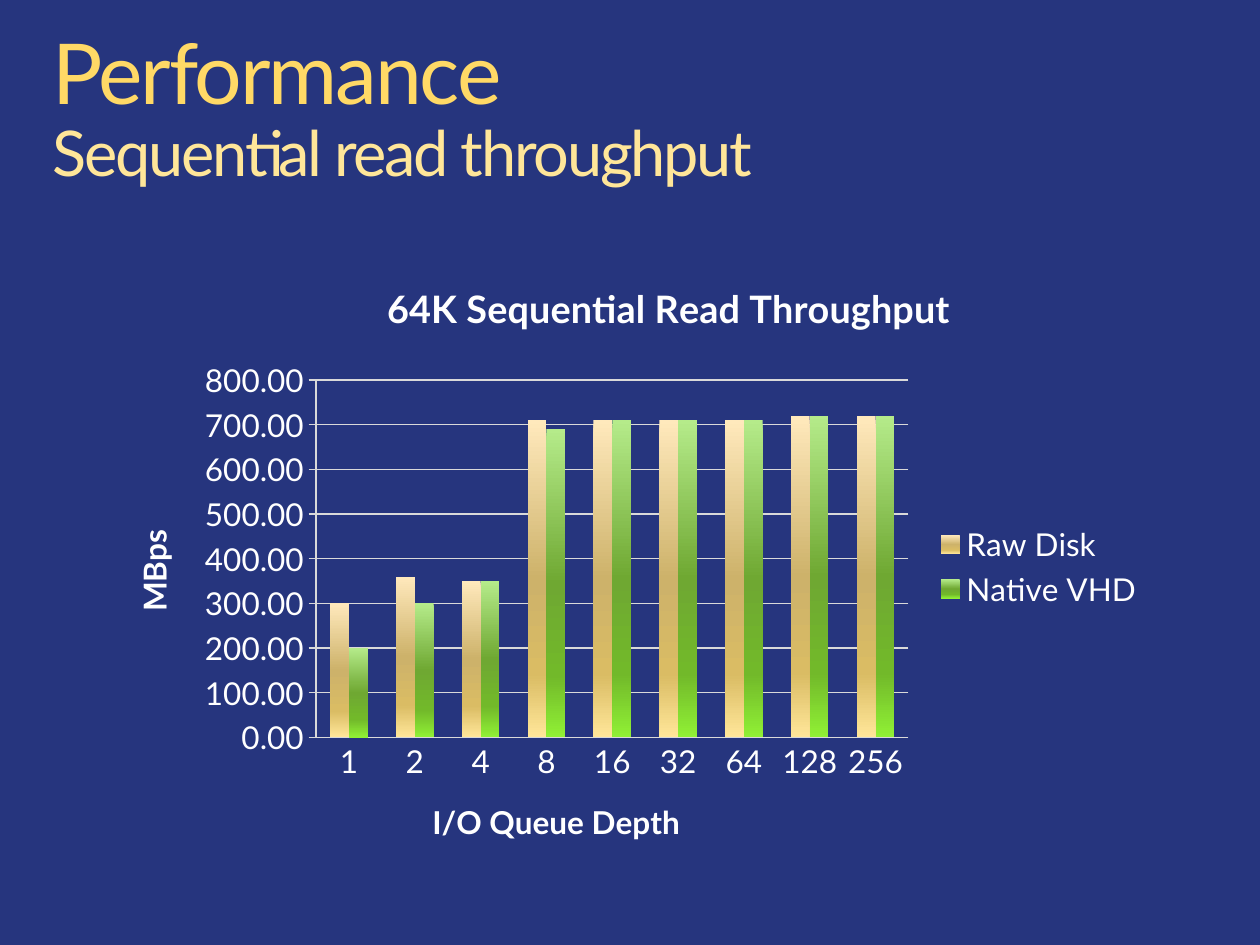
from dataclasses import dataclass

from lxml import etree
from pptx import Presentation
from pptx.chart.data import CategoryChartData
from pptx.dml.color import RGBColor
from pptx.enum.chart import XL_CHART_TYPE as ChartType
from pptx.enum.chart import XL_LEGEND_POSITION as LegendPosition
from pptx.enum.chart import XL_TICK_MARK as TickMark
from pptx.enum.text import MSO_ANCHOR as Anchor
from pptx.oxml import parse_xml
from pptx.oxml.ns import nsdecls, qn
from pptx.util import Cm, Pt

FONT = "Lato"
BACKGROUND, WHITE, LINE = "26357E", "FFFFFF", "D9D9D9"
QUEUE_DEPTHS = [str(2 ** power) for power in range(9)]


@dataclass
class TitleLine:
    text: str
    size: int
    color: str


@dataclass
class ThroughputSeries:
    name: str
    values: list[int]
    stops: list[tuple[int, str]]


TITLE_LINES = [
    TitleLine("Performance", 48, "FFD966"),
    TitleLine("Sequential read throughput", 36, "FFE699"),
]
SERIES = [
    ThroughputSeries("Raw Disk", [300, 360, 350, 710, 710, 710, 710, 720, 720],
                     [(0, "FFE9BC"), (50, "CDB26A"), (80, "DABC64"), (100, "FFE699")]),
    ThroughputSeries("Native VHD", [200, 300, 350, 690, 710, 710, 710, 720, 720],
                     [(0, "B5EB8A"), (50, "6FA832"), (80, "72B92A"), (100, "90F035")]),
]


def rgb(color: str) -> RGBColor:
    return RGBColor.from_string(color)


def format_font(font, color: str = WHITE, **values) -> None:
    for name, value in ({"name": FONT} | values).items():
        setattr(font, name, value)
    font.color.rgb = rgb(color)


def add_title(slide) -> None:
    box = slide.shapes.add_textbox(Cm(1.06), Cm(0.64), Cm(23.27), Cm(3.23))
    frame = box.text_frame
    settings = {"word_wrap": True, "vertical_anchor": Anchor.TOP, "margin_left": 0,
                "margin_right": 0, "margin_top": 0, "margin_bottom": 0}
    for name, value in settings.items():
        setattr(frame, name, value)
    paragraph = frame.paragraphs[0]
    paragraph.line_spacing = 0.9
    for index, line in enumerate(TITLE_LINES):
        if index:
            paragraph.add_line_break()
        run = paragraph.add_run()
        run.text = line.text
        format_font(run.font, line.color, size=Pt(line.size))
        run.font._element.set("spc", "-124")


def manual_layout(element, before: str, **percentages: float) -> None:
    """Place a chart part by percentages of the chart, after the child named before."""
    for old in element.findall(qn("c:layout")):
        element.remove(old)
    layout = etree.Element(qn("c:layout"))
    manual = etree.SubElement(layout, qn("c:manualLayout"))
    if before == "":
        etree.SubElement(manual, qn("c:layoutTarget")).set("val", "inner")
    for mode in ("xMode", "yMode"):
        etree.SubElement(manual, qn(f"c:{mode}")).set("val", "edge")
    for name, value in percentages.items():
        etree.SubElement(manual, qn(f"c:{name}")).set("val", f"{value / 100:.4f}")
    if before:
        element.find(qn(before)).addnext(layout)
    else:
        element.insert(0, layout)


def set_title(owner, text: str, size: float, x: float, y: float) -> None:
    """Give a chart or an axis a bold title at a fixed place."""
    owner.has_title = True
    title = owner.chart_title if hasattr(owner, "chart_title") else owner.axis_title
    title.text_frame.text = text
    run = title.text_frame.paragraphs[0].runs[0]
    format_font(run.font, size=Pt(size), bold=True)
    manual_layout(title._element, "c:tx", x=x, y=y)


def format_axis(axis, tick_mark) -> None:
    axis.major_tick_mark = tick_mark
    axis.minor_tick_mark = TickMark.NONE
    format_font(axis.tick_labels.font, size=Pt(18))
    format_line(axis.format.line)


def format_line(line) -> None:
    line.color.rgb = rgb(LINE)
    line.width = Pt(0.75)


def fill_gradient(series, stops: list[tuple[int, str]]) -> None:
    marks = "".join(f'<a:gs pos="{place * 1000}"><a:srgbClr val="{color}"/></a:gs>'
                    for place, color in stops)
    gradient = parse_xml(f'<a:gradFill {nsdecls("a")} rotWithShape="1"><a:gsLst>{marks}'
                         '</a:gsLst><a:lin ang="5400000" scaled="0"/></a:gradFill>')
    properties = series._element.get_or_add_spPr()
    properties.insert(0, gradient)


def add_throughput_chart(slide) -> None:
    data = CategoryChartData(number_format="0.00")
    data.categories = QUEUE_DEPTHS
    for entry in SERIES:
        data.add_series(entry.name, entry.values)
    frame = slide.shapes.add_chart(ChartType.COLUMN_CLUSTERED, Cm(2.11), Cm(5.28),
                                   Cm(21.21), Cm(12.29), data)
    chart = frame.chart
    format_font(chart.font, size=Pt(18))
    set_title(chart, "64K Sequential Read Throughput", 21.6, 26.2, 2)
    chart.chart_title.include_in_layout = False

    category_axis, value_axis = chart.category_axis, chart.value_axis
    format_axis(category_axis, TickMark.NONE)
    format_axis(value_axis, TickMark.CROSS)
    set_title(category_axis, "I/O Queue Depth", 18, 30.6, 87.2)
    set_title(value_axis, "MBps", 18, 2, 43)
    scale = {"minimum_scale": 0, "maximum_scale": 800, "major_unit": 100}
    for name, value in scale.items():
        setattr(value_axis, name, value)
    value_axis.tick_labels.number_format = "0.00"
    value_axis.tick_labels.number_format_is_linked = False
    format_line(value_axis.major_gridlines.format.line)

    plot = chart.plots[0]
    plot.gap_width, plot.overlap, plot.vary_by_categories = 150, 0, False
    for series, entry in zip(plot.series, SERIES):
        fill_gradient(series, entry.stops)
    plot_area = chart._chartSpace.chart.plotArea
    manual_layout(plot_area, "", x=20.1, y=19.4, w=56.3, h=58.6)

    chart.has_legend = True
    chart.legend.position = LegendPosition.RIGHT
    chart.legend.include_in_layout = False
    format_font(chart.legend.font, size=Pt(18))


def main() -> None:
    presentation = Presentation()
    presentation.slide_width, presentation.slide_height = Cm(25.4), Cm(19.05)
    slide = presentation.slides.add_slide(presentation.slide_layouts[6])
    slide.background.fill.solid()
    slide.background.fill.fore_color.rgb = rgb(BACKGROUND)
    add_title(slide)
    add_throughput_chart(slide)
    presentation.save("out.pptx")


if __name__ == "__main__":
    main()
